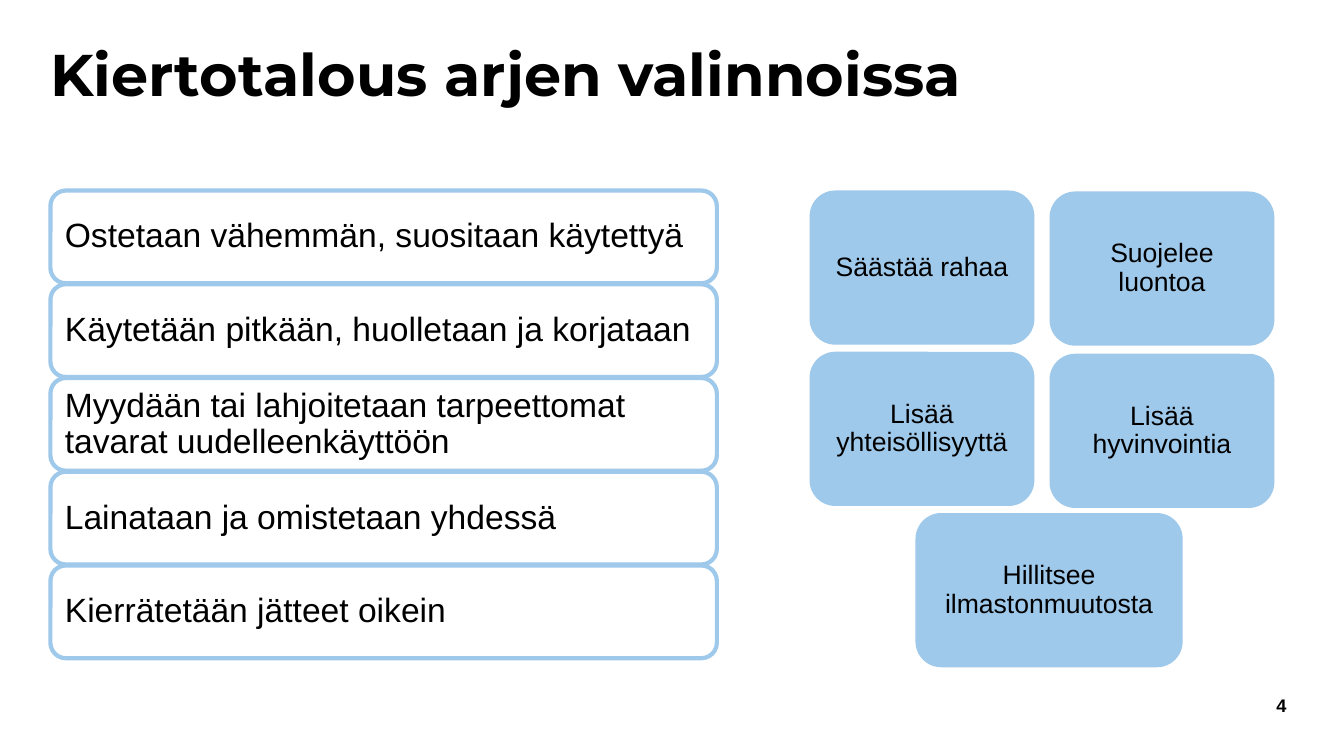
import pptx
import pptx.dml.color
import pptx.enum.shapes
import pptx.enum.text
import pptx.util

Inches = pptx.util.Inches
Pt = pptx.util.Pt
Align = pptx.enum.text.PP_ALIGN
Anchor = pptx.enum.text.MSO_ANCHOR

BLACK = pptx.dml.color.RGBColor(0x00, 0x00, 0x00)
LIGHT_BLUE = pptx.dml.color.RGBColor(0x9F, 0xC9, 0xEB)

CHOICES = [
    "Ostetaan vähemmän, suositaan käytettyä",
    "Käytetään pitkään, huolletaan ja korjataan",
    "Myydään tai lahjoitetaan tarpeettomat tavarat uudelleenkäyttöön",
    "Lainataan ja omistetaan yhdessä",
    "Kierrätetään jätteet oikein",
]
BENEFITS = [
    ("Säästää rahaa", 8.03, 1.89, 2.23),
    ("Suojelee luontoa", 10.41, 1.9, 2.23),
    ("Lisää yhteisöllisyyttä", 8.03, 3.49, 2.23),
    ("Lisää hyvinvointia", 10.41, 3.51, 2.23),
    ("Hillitsee ilmastonmuutosta", 9.08, 5.09, 2.65),
]


def write_text(box, text, *, size, font="Arial", bold=False, align=Align.LEFT,
               anchor=Anchor.MIDDLE, inset=0, spacing=0.9):
    """Fill a box with one formatted paragraph."""
    frame = box.text_frame
    frame.word_wrap = True
    frame.auto_size = pptx.enum.text.MSO_AUTO_SIZE.NONE
    frame.vertical_anchor = anchor
    frame.margin_left = frame.margin_right = Inches(inset)
    frame.margin_top = frame.margin_bottom = Inches(inset)
    para = frame.paragraphs[0]
    para.alignment = align
    para.line_spacing = spacing
    span = para.add_run()
    span.text = text
    span.font.name = font
    span.font.size = Pt(size)
    span.font.bold = bold
    span.font.color.rgb = BLACK


class SlideBuilder:
    """Holds the slide and its accent colour."""

    def __init__(self, page, accent):
        self.page = page
        self.accent = accent

    def title(self, text, left, top, width, height):
        box = self.page.shapes.title
        box.left, box.top = Inches(left), Inches(top)
        box.width, box.height = Inches(width), Inches(height)
        write_text(box, text, size=42, font="Montserrat", bold=True,
                   anchor=Anchor.TOP)

    def card(self, text, left, top, width, height, filled, **text_format):
        box = self.page.shapes.add_shape(
            pptx.enum.shapes.MSO_SHAPE.ROUNDED_RECTANGLE,
            Inches(left), Inches(top), Inches(width), Inches(height))
        box.shadow.inherit = False
        if filled:
            box.fill.solid()
            box.fill.fore_color.rgb = self.accent
            box.line.fill.background()
        else:
            box.fill.background()
            box.line.color.rgb = self.accent
            box.line.width = Pt(3)
        write_text(box, text, **text_format)

    def label(self, text, left, top, width, height, **text_format):
        box = self.page.shapes.add_textbox(
            Inches(left), Inches(top), Inches(width), Inches(height))
        write_text(box, text, **text_format)


def main():
    deck = pptx.Presentation()
    deck.slide_width, deck.slide_height = Inches(13.33), Inches(7.5)
    page = deck.slides.add_slide(deck.slide_layouts.get_by_name("Title Only"))
    builder = SlideBuilder(page, LIGHT_BLUE)

    # Title
    builder.title("Kiertotalous arjen valinnoissa", 0.5, 0.45, 10.91, 0.86)

    # Everyday choices, stacked
    for row, choice in enumerate(CHOICES):
        builder.card(choice, 0.5, 1.89 + 0.93 * row, 6.61, 0.92, filled=False,
                     size=24, inset=0.1)

    # Benefits
    for benefit, left, top, width in BENEFITS:
        builder.card(benefit, left, top, width, 1.53, filled=True,
                     size=19, inset=0.07, align=Align.CENTER)

    # Page number
    builder.label("4", 11.41, 6.86, 1.35, 0.28, size=13, bold=True,
                  align=Align.RIGHT, spacing=1.0)

    deck.save("out.pptx")


if __name__ == "__main__":
    main()
